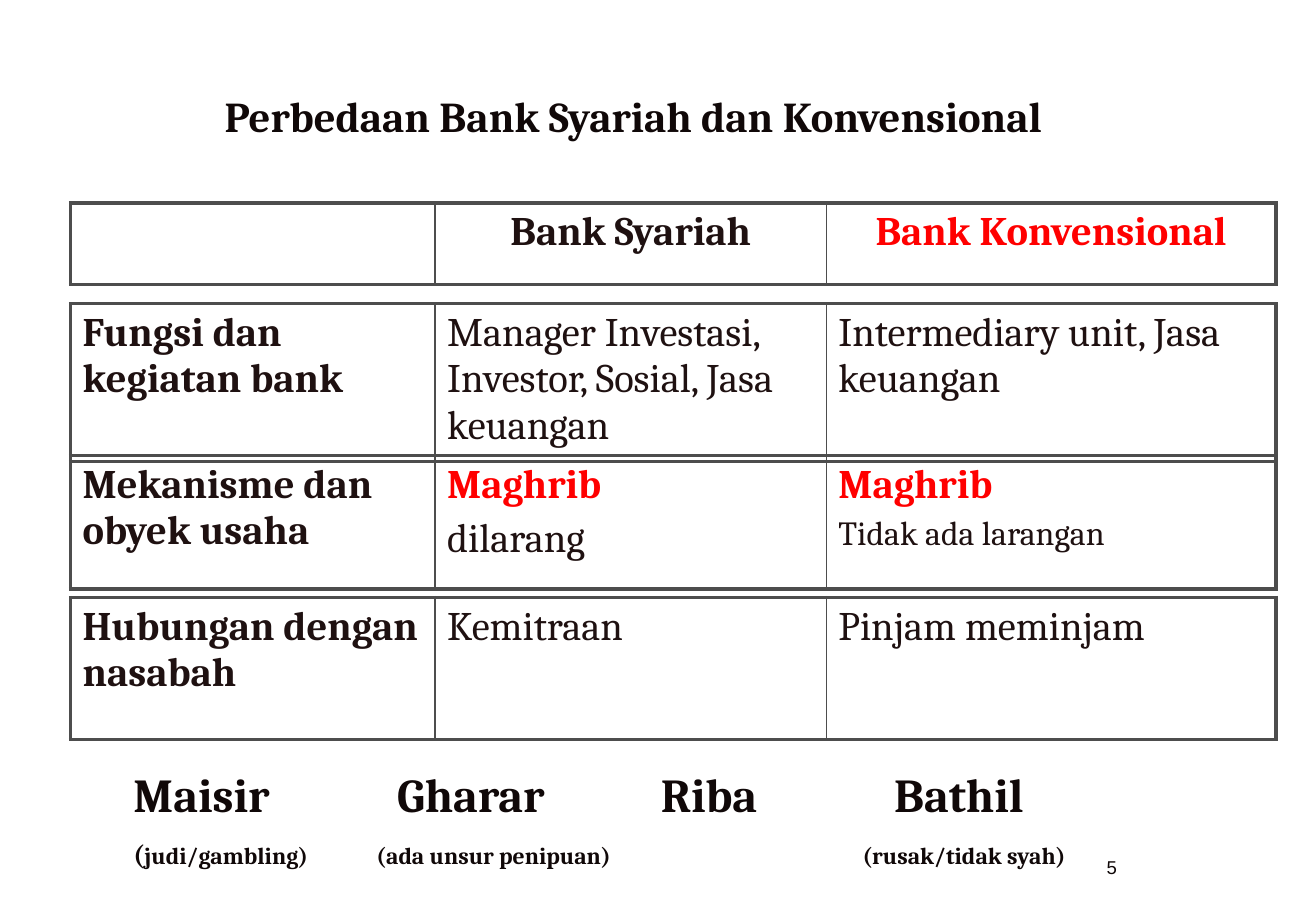
from dataclasses import dataclass

from lxml.etree import SubElement
from pptx import Presentation
from pptx.dml.color import RGBColor
from pptx.enum.text import MSO_ANCHOR, PP_ALIGN
from pptx.oxml.ns import qn
from pptx.util import Inches, Pt

COLORS = {"ink": "100808", "cell": "1F1111", "red": "FF0000", "border": "4D4D4D"}
COLUMN_WIDTHS = (3, 3.22, 3.7)
TABLE_LEFT = 0.58


@dataclass
class Span:
    text: str
    size: float = 24
    color: str = "cell"
    bold: bool = False
    font: str = "Cambria"


@dataclass
class Line:
    spans: list[Span]
    space_before: float = 0
    align: PP_ALIGN = PP_ALIGN.LEFT
    tabs: tuple[float, ...] = ()


@dataclass
class Band:
    top: float
    height: float
    cells: list[list[Line]]


def write_lines(frame, lines: list[Line]) -> None:
    for index, line in enumerate(lines):
        para = frame.paragraphs[0] if index == 0 else frame.add_paragraph()
        para.alignment = line.align
        if line.space_before:
            para.space_before = Pt(line.space_before)
        if line.tabs:
            tab_list = SubElement(para._p.get_or_add_pPr(), qn("a:tabLst"))
            for position in line.tabs:
                SubElement(tab_list, qn("a:tab"), pos=str(int(Inches(position))), algn="l")
        for span in line.spans:
            run = para.add_run()
            run.text = span.text
            run.font.name = span.font
            run.font.size = Pt(span.size)
            run.font.bold = span.bold
            run.font.color.rgb = RGBColor.from_string(COLORS[span.color])


def add_text(page, left: float, top: float, width: float, height: float,
             lines: list[Line], anchor: MSO_ANCHOR = MSO_ANCHOR.TOP) -> None:
    box = page.shapes.add_textbox(Inches(left), Inches(top), Inches(width), Inches(height))
    box.text_frame.word_wrap = True
    box.text_frame.vertical_anchor = anchor
    write_lines(box.text_frame, lines)


def add_border(cell, side: str, width: float) -> None:
    edge = SubElement(cell._tc.get_or_add_tcPr(), qn(f"a:ln{side}"), w=str(int(Pt(width))))
    fill = SubElement(edge, qn("a:solidFill"))
    SubElement(fill, qn("a:srgbClr"), val=COLORS["border"])


def add_band(page, band: Band) -> None:
    frame = page.shapes.add_table(1, len(COLUMN_WIDTHS), Inches(TABLE_LEFT), Inches(band.top),
                                  Inches(sum(COLUMN_WIDTHS)), Inches(band.height))
    table = frame.table
    table.first_row = False
    table.horz_banding = False
    last = len(COLUMN_WIDTHS) - 1
    for index, (width, lines) in enumerate(zip(COLUMN_WIDTHS, band.cells)):
        table.columns[index].width = Inches(width)
        cell = table.cell(0, index)
        # Thick outer frame, thin column dividers
        add_border(cell, "L", 2.25 if index == 0 else 1)
        add_border(cell, "R", 2.25 if index == last else 1)
        add_border(cell, "T", 2.25)
        add_border(cell, "B", 2.25)
        cell.fill.background()
        write_lines(cell.text_frame, lines)


def plain(text: str) -> list[Line]:
    return [Line([Span(text)])]


def label(text: str) -> list[Line]:
    return [Line([Span(text, bold=True)])]


def heading(text: str, color: str) -> list[Line]:
    return [Line([Span(text, color=color, bold=True)], align=PP_ALIGN.CENTER)]


def maghrib(text: str, size: float) -> list[Line]:
    return [Line([Span("Maghrib", color="red", bold=True)]),
            Line([Span(text, size)], space_before=size / 5)]


BANDS = [
    Band(1.67, 0.67, [[], heading("Bank Syariah", "cell"),
                      heading("Bank Konvensional", "red")]),
    Band(4.92, 1.17, [label("Hubungan dengan nasabah"), plain("Kemitraan"),
                      plain("Pinjam meminjam")]),
    Band(3.75, 1.1, [label("Mekanisme dan obyek usaha"), maghrib("dilarang", 24),
                     maghrib("Tidak ada larangan", 20)]),
    Band(2.5, 1.3, [label("Fungsi dan kegiatan bank"),
                    plain("Manager Investasi, Investor, Sosial, Jasa keuangan"),
                    plain("Intermediary unit, Jasa keuangan")]),
]

FORBIDDEN = [
    Line([Span("Maisir\tGharar\tRiba\tBathil", 28, "ink", True)], tabs=(2.17, 4.34, 6.26)),
    Line([Span("(", 16, "ink", True),
          Span("judi/gambling)\t(ada unsur penipuan)\t(rusak/tidak syah)", 14, "ink", True)],
         space_before=9, tabs=(2, 6)),
]


def main() -> None:
    deck = Presentation()
    deck.slide_width, deck.slide_height = Inches(10.83), Inches(7.5)
    page = deck.slides.add_slide(deck.slide_layouts[6])

    # Title
    add_text(page, 1.75, 0.58, 7.71, 0.75,
             [Line([Span("Perbedaan Bank Syariah dan Konvensional", 25.2, "ink", True)])],
             MSO_ANCHOR.MIDDLE)

    # Comparison tables
    for band in BANDS:
        add_band(page, band)

    # Forbidden elements and page number
    add_text(page, 1, 6.25, 7.97, 0.98, FORBIDDEN)
    add_text(page, 9.01, 7, 1.5, 0.5, [Line([Span("5", 11, "ink", font="Arial")])])

    deck.save("out.pptx")


if __name__ == "__main__":
    main()
